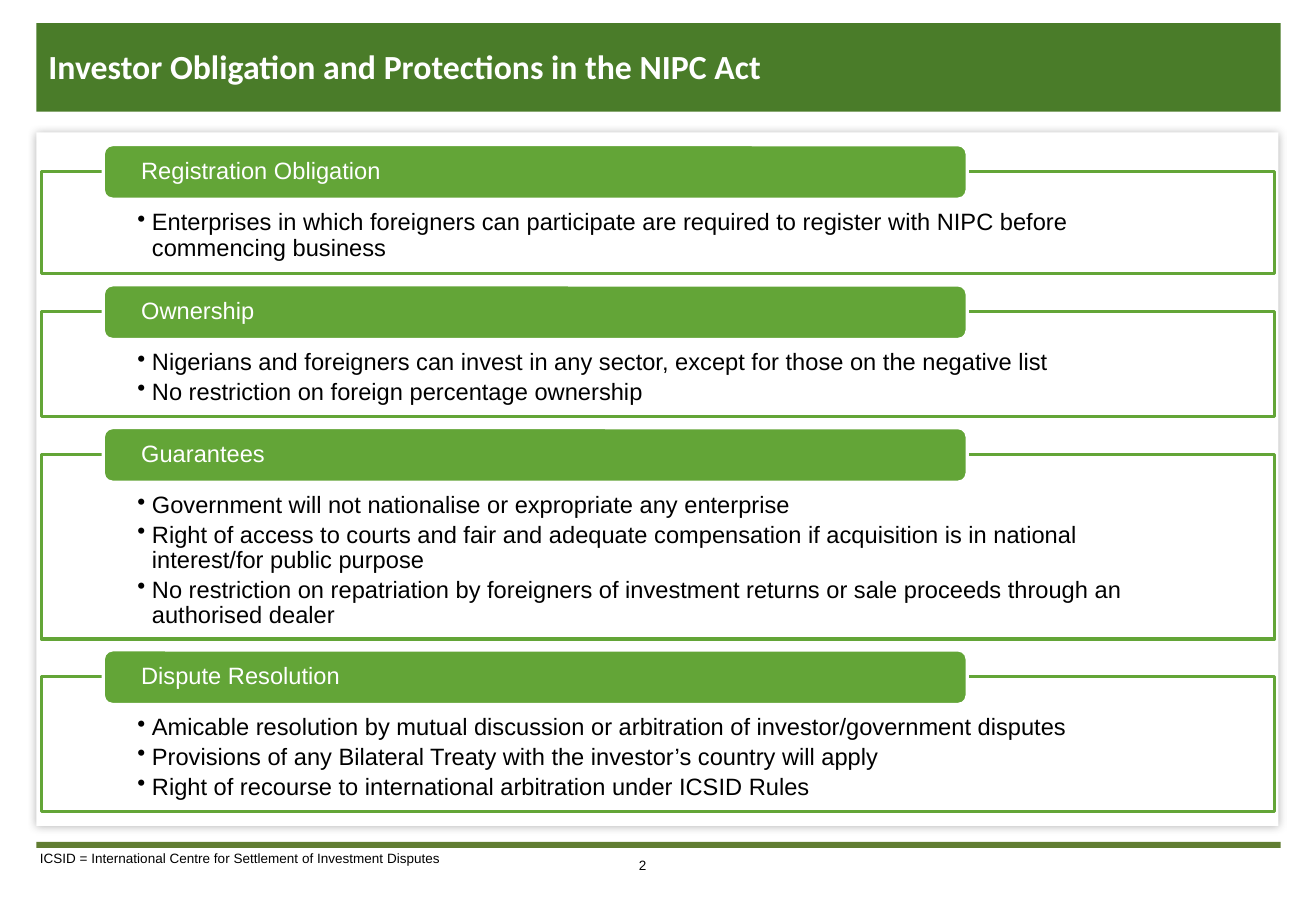
from lxml.etree import SubElement
from pptx import Presentation
from pptx.dml.color import RGBColor
from pptx.enum.shapes import MSO_SHAPE
from pptx.enum.text import MSO_ANCHOR, PP_ALIGN
from pptx.oxml.ns import qn
from pptx.util import Inches, Pt

COLUMNS, ROWS = 108.3, 75
SECTIONS = [
    ("Registration Obligation", 8.45, [
        "Enterprises in which foreigners can participate are required to register "
        "with NIPC before commencing business"]),
    ("Ownership", 8.65, [
        "Nigerians and foreigners can invest in any sector, except for those on the negative list",
        "No restriction on foreign percentage ownership"]),
    ("Guarantees", 15.2, [
        "Government will not nationalise or expropriate any enterprise",
        "Right of access to courts and fair and adequate compensation if acquisition "
        "is in national interest/for public purpose",
        "No restriction on repatriation by foreigners of investment returns or sale "
        "proceeds through an authorised dealer"]),
    ("Dispute Resolution", 11.1, [
        "Amicable resolution by mutual discussion or arbitration of investor/government disputes",
        "Provisions of any Bilateral Treaty with the investor’s country will apply",
        "Right of recourse to international arbitration under ICSID Rules"]),
]


def colour(value):
    return RGBColor.from_string(value)


class SlideBuilder:
    """Draws styled elements on a page measured in grid columns and rows."""

    GREEN, DARK, RULE, WHITE, BLACK = "63A537", "4A7C29", "617D32", "FFFFFF", "000000"

    def __init__(self, deck):
        self.column = deck.slide_width / COLUMNS
        self.row = deck.slide_height / ROWS
        self.page = deck.slides.add_slide(deck.slide_layouts[6])

    def place(self, left, top, width, height):
        return (round(left * self.column), round(top * self.row),
                round(width * self.column), round(height * self.row))

    def block(self, area, fill, line=None, kind=MSO_SHAPE.RECTANGLE):
        shape = self.page.shapes.add_shape(kind, *self.place(*area))
        shape.shadow.inherit = False
        shape.fill.solid()
        shape.fill.fore_color.rgb = colour(fill)
        if line:
            shape.line.color.rgb = colour(line)
            shape.line.width = Pt(2)
        else:
            shape.line.fill.background()
        return shape

    def set_text(self, shape, lines, size, ink, insets, anchor=MSO_ANCHOR.MIDDLE,
                 font="Arial", bold=False, spacing=1.0):
        frame = shape.text_frame
        frame.word_wrap = True
        frame.vertical_anchor = anchor
        side, top, bottom = insets
        frame.margin_left = frame.margin_right = round(side * self.column)
        frame.margin_top, frame.margin_bottom = round(top * self.row), round(bottom * self.row)
        frame.text = "\n".join(lines)
        for paragraph in frame.paragraphs:
            paragraph.alignment = PP_ALIGN.LEFT
            paragraph.line_spacing = spacing
            for span in paragraph.runs:
                span.font.name = font
                span.font.size = Pt(size)
                span.font.bold = bold
                span.font.color.rgb = colour(ink)
        return frame

    def title(self, area, text):
        bar = self.block(area, self.DARK)
        self.set_text(bar, [text], 20, self.WHITE, (1, 0.4, 0.6), font="Calibri", bold=True)

    def card(self, area):
        effects = self.block(area, self.WHITE)._element.spPr.find(qn("a:effectLst"))
        shadow = SubElement(effects, qn("a:outerShdw"), blurRad=str(Pt(5)), dist=str(Pt(1)),
                            dir="5400000", algn="t", rotWithShape="0")
        tone = SubElement(shadow, qn("a:srgbClr"), val="404040")
        SubElement(tone, qn("a:alpha"), val="40000")

    def panel(self, area, points):
        panel = self.block(area, self.WHITE, self.GREEN)
        tone = panel._element.spPr.find(qn("a:solidFill")).find(qn("a:srgbClr"))
        SubElement(tone, qn("a:alpha"), val="90000")
        frame = self.set_text(panel, points, 14, self.BLACK, (7.9, 3.2, 1.1),
                              MSO_ANCHOR.TOP, spacing=0.9)
        for paragraph in frame.paragraphs:
            paragraph.space_after = Pt(2.4)
            properties = paragraph._p.get_or_add_pPr()
            properties.set("marL", str(Inches(0.12)))
            properties.set("indent", str(-Inches(0.12)))
            SubElement(properties, qn("a:buChar"), char="•")

    def heading(self, area, text):
        heading = self.block(area, self.GREEN, self.WHITE, MSO_SHAPE.ROUNDED_RECTANGLE)
        self.set_text(heading, [text], 14, self.WHITE, (2.9, 0, 0), spacing=0.9)

    def note(self, area, text):
        box = self.page.shapes.add_textbox(*self.place(*area))
        frame = self.set_text(box, [text], 8, self.BLACK, (1, 0.5, 0.5), MSO_ANCHOR.TOP)
        frame.word_wrap = False


def main():
    deck = Presentation()
    deck.slide_width, deck.slide_height = Inches(10.83), Inches(7.5)
    builder = SlideBuilder(deck)
    builder.block((3, 69.3, 102.4, 0.5), builder.RULE)
    builder.title((3, 1.9, 102.4, 7.3), "Investor Obligation and Protections in the NIPC Act")
    builder.card((3, 10.9, 102.2, 57.1))
    top, gap, overlap = 14.1, 3.1, 2.2
    for name, height, points in SECTIONS:
        builder.panel((3.4, top, 101.5, height), points)
        builder.heading((8.5, top - overlap, 71.1, 4.5), name)
        top += height + gap
    builder.note((2.3, 69.5, 35.4, 2.4),
                 "ICSID = International Centre for Settlement of Investment Disputes")
    builder.note((51.6, 70.1, 3.4, 2.4), "2")
    deck.save("out.pptx")


if __name__ == "__main__":
    main()
